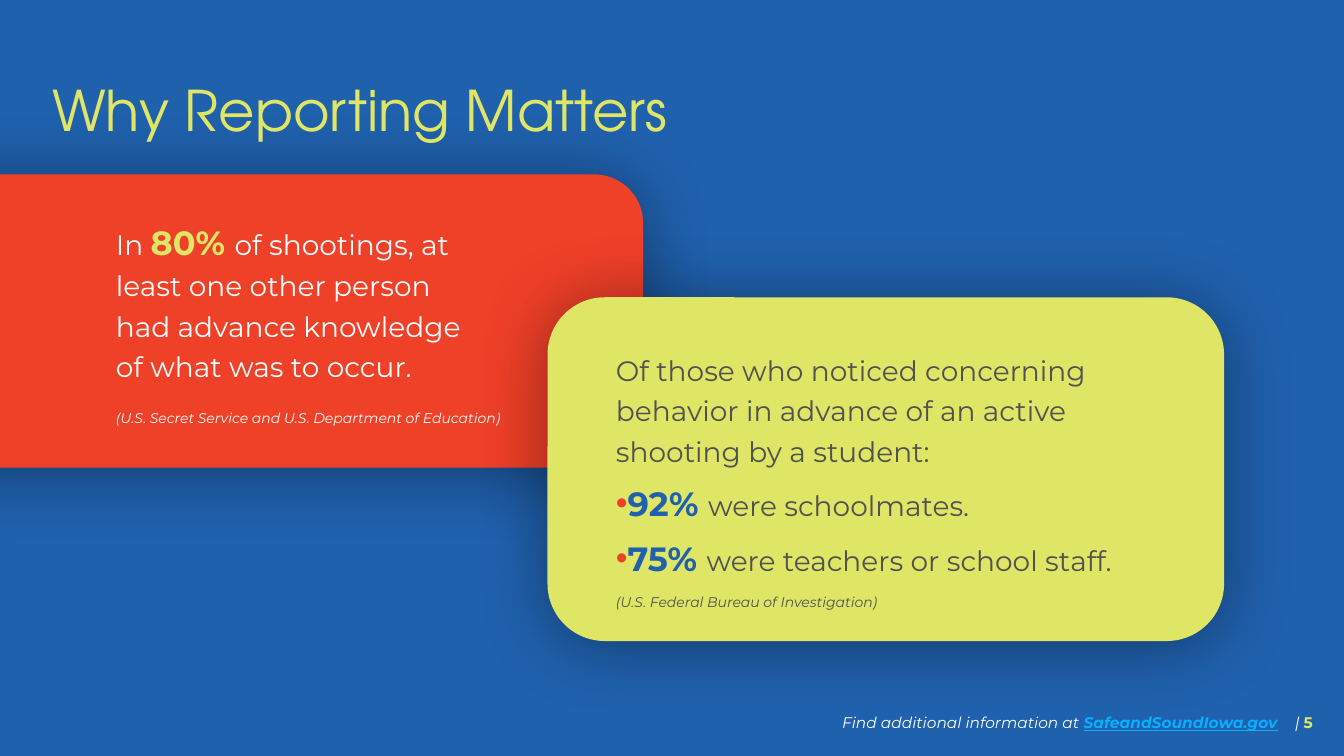
from lxml.etree import SubElement
from pptx import Presentation
from pptx.dml.color import RGBColor
from pptx.enum.shapes import MSO_SHAPE
from pptx.enum.text import MSO_ANCHOR, PP_ALIGN
from pptx.oxml.ns import qn
from pptx.util import Inches, Pt

WIDTH, HEIGHT = Inches(13.33), Inches(7.5)
COLORS = {"blue": "2061AE", "red": "EF4028", "lime": "DFE565", "gray": "515151",
          "white": "FFFFFF", "sky": "05B1FF", "black": "000000"}
LEFT, RIGHT = 7.88, 45.09
LOOSE = {"line_spacing": 1.2, "space_before": Pt(10)}
ITEM = {"line_spacing": 1.2, "space_before": Pt(5)}


def place(x, y, wide, high):
    """Turn percent shares of the slide into lengths."""
    return [int(side * share / 100) for side, share in
            zip((WIDTH, HEIGHT, WIDTH, HEIGHT), (x, y, wide, high))]


def assign(target, values):
    """Set each attribute named in a dict."""
    for name, value in values.items():
        setattr(target, name, value)


def add_panel(slide, kind, area, color):
    """Add a filled shape without outline or shadow."""
    panel = slide.shapes.add_shape(kind, *place(*area))
    panel.fill.solid()
    panel.fill.fore_color.rgb = RGBColor.from_string(COLORS[color])
    panel.line.fill.background()
    panel.shadow.inherit = False
    return panel


def add_shadow(panel):
    """Give a panel a wide, soft shadow falling downward."""
    effects = panel._element.spPr.find(qn("a:effectLst"))
    shadow = SubElement(effects, qn("a:outerShdw"), blurRad=str(Pt(52.3)),
                        dist=str(Pt(3)), dir="5400000", algn="t", rotWithShape="0")
    tint = SubElement(shadow, qn("a:srgbClr"), val=COLORS["black"])
    SubElement(tint, qn("a:alpha"), val="40000")


def add_bullet(para, color):
    """Put a colored bullet directly before a paragraph."""
    props = para._p.get_or_add_pPr()
    props.set("marL", "0")
    props.set("indent", "0")
    tint = SubElement(props, qn("a:buClr"))
    SubElement(tint, qn("a:srgbClr"), val=COLORS[color])
    SubElement(props, qn("a:buFont"), typeface="Arial")
    SubElement(props, qn("a:buChar"), char="•")


def add_run(para, text, size, color, font="Montserrat", **style):
    """Add a styled piece of text to a paragraph."""
    run = para.add_run()
    run.text = text
    assign(run.font, {"name": font, "size": Pt(size), **style})
    run.font.color.rgb = RGBColor.from_string(COLORS[color])


def add_text(slide, area, layout, anchor=MSO_ANCHOR.TOP):
    """Add a wrapping text box and return its first paragraph."""
    frame = slide.shapes.add_textbox(*place(*area)).text_frame
    assign(frame, {"word_wrap": True, "vertical_anchor": anchor})
    para = frame.paragraphs[0]
    assign(para, layout)
    return frame, para


def add_note(slide, area, text, color, layout):
    """Add a small italic source line."""
    para = add_text(slide, area, layout)[1]
    add_run(para, text, 10, color, italic=True)


def add_title(slide):
    """Add the slide heading."""
    para = add_text(slide, (3.15, 5.33, 86.27, 19.33), {"line_spacing": 0.9},
                    MSO_ANCHOR.MIDDLE)[1]
    add_run(para, "Why Reporting Matters", 40, "lime", "TeX Gyre Adventor")


def add_fact(slide):
    """Add the statement on the red panel."""
    para = add_text(slide, (LEFT, 27.6, 28.58, 23.6), LOOSE)[1]
    add_run(para, "In ", 20, "white")
    add_run(para, "80% ", 24, "lime", bold=True)
    add_run(para, "of shootings, at least one other person had advance "
                  "knowledge of what was to occur.", 20, "white")


def add_list(slide):
    """Add the statement and bullets on the lime panel."""
    frame, para = add_text(slide, (RIGHT, 45.2, 44.11, 31.73), LOOSE)
    add_run(para, "Of those who noticed concerning behavior in advance of an "
                  "active shooting by a student:", 20, "gray")
    for share, group in (("92% ", "were schoolmates."),
                         ("75% ", "were teachers or school staff.")):
        para = frame.add_paragraph()
        assign(para, ITEM)
        add_bullet(para, "red")
        add_run(para, share, 24, "blue", bold=True)
        add_run(para, group, 20, "gray")


def add_footer(slide):
    """Add the web address and the page number."""
    layout = {"alignment": PP_ALIGN.RIGHT}
    para = add_text(slide, (24.83, 93.73, 70.97, 5.33), layout)[1]
    add_run(para, "Find additional information at ", 11, "white", italic=True)
    add_run(para, "SafeandSoundIowa.gov", 11, "sky",
            italic=True, bold=True, underline=True)
    para = add_text(slide, (93.77, 93.73, 4.65, 5.33), layout)[1]
    add_run(para, "| ", 11, "white", italic=True)
    add_run(para, "5", 11, "lime", bold=True)


def main():
    """Build and save the slide."""
    deck = Presentation()
    assign(deck, {"slide_width": WIDTH, "slide_height": HEIGHT})
    slide = deck.slides.add_slide(deck.slide_layouts[6])
    add_panel(slide, MSO_SHAPE.RECTANGLE, (0, 0, 100, 100), "blue")
    for area, color in (((-5.7, 23.07, 53.56, 38.8), "red"),
                        ((40.74, 39.33, 50.34, 45.47), "lime")):
        add_shadow(add_panel(slide, MSO_SHAPE.ROUNDED_RECTANGLE, area, color))
    add_title(slide)
    add_list(slide)
    add_fact(slide)
    add_footer(slide)
    add_note(slide, (LEFT, 53.07, 33.46, 3.87),
             "(U.S. Secret Service and U.S. Department of Education)", "white", LOOSE)
    add_note(slide, (RIGHT, 77.87, 52.36, 3.6),
             "(U.S. Federal Bureau of Investigation)", "gray", {})
    deck.save("out.pptx")


if __name__ == "__main__":
    main()
